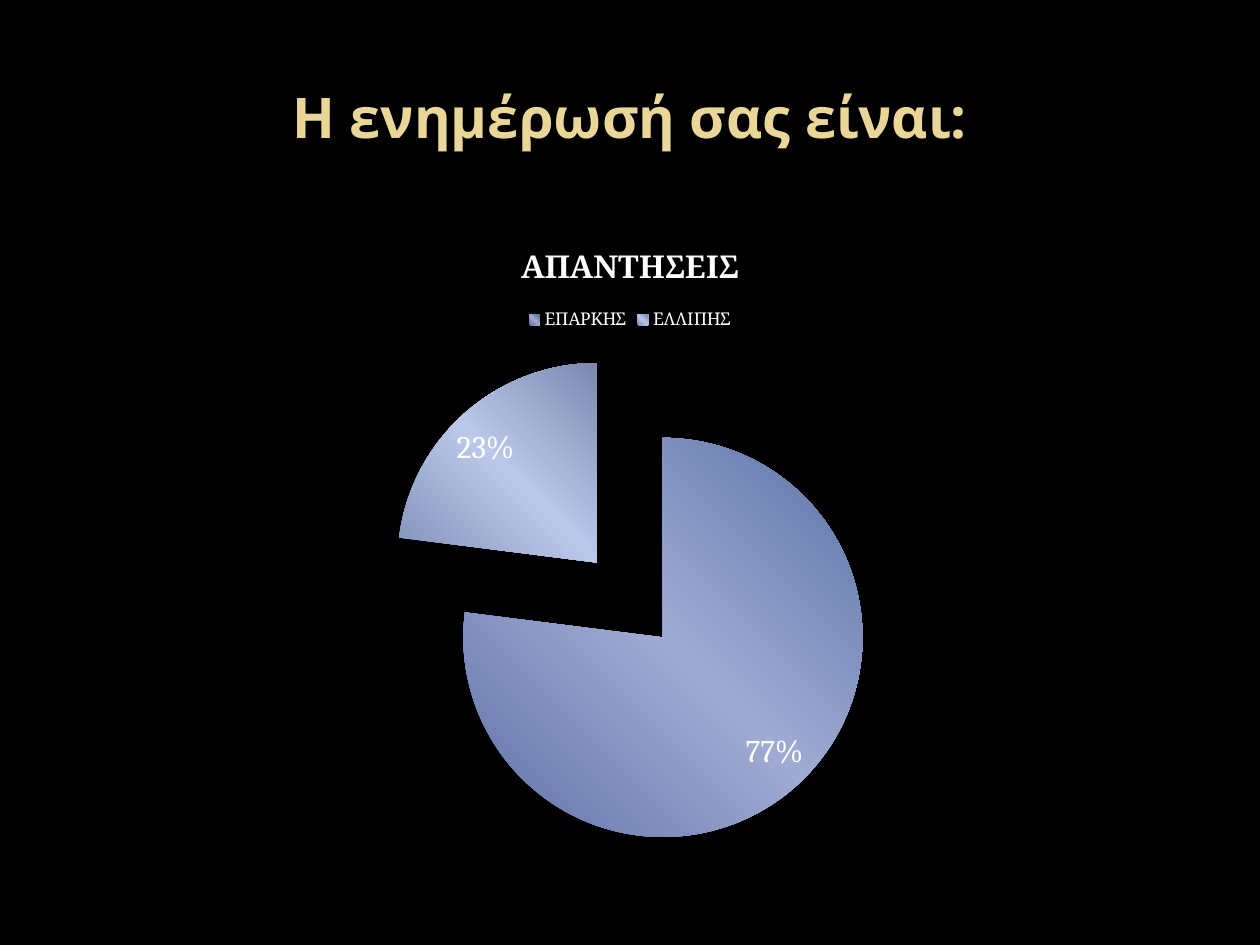
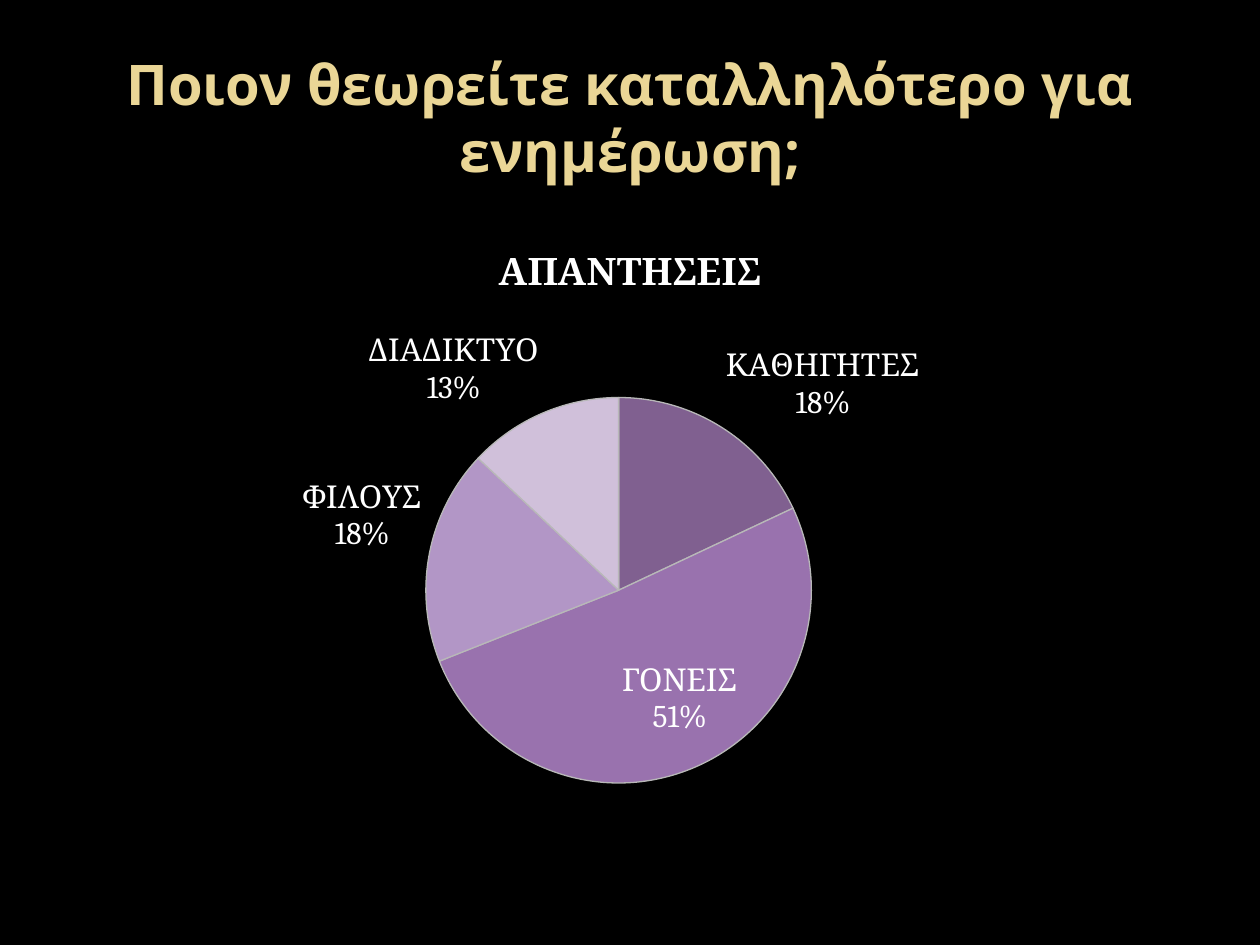
import copy

import pptx
import pptx.chart.data
import pptx.dml.color
import pptx.enum.chart
import pptx.enum.text
import pptx.oxml
import pptx.oxml.ns
import pptx.util
from pptx.util import Inches

COLORS = {"background": "000000", "title": "EAD696", "text": "FFFFFF", "outline": "B8B8B8"}
TITLE_FONT = "Noto Sans"
CHART_FONT = "Cambria"
CHART_TITLE = "ΑΠΑΝΤΗΣΕΙΣ"
LABEL_SIZE = 18

QUESTIONS = [
    {
        "title": "Η ενημέρωσή σας είναι:",
        "answers": [("ΕΠΑΡΚΗΣ", 77), ("ΕΛΛΙΠΗΣ", 23)],
        "fills": [("5F70A5", "A0ABD3", "5B73A6"), ("8090B8", "BCC8EA", "7B89B0")],
        "font_size": 10,
        "chart_title_size": 18,
        "explosion": 25,
        "legend": True,
        "outlined": False,
        "plot": {"x": 0.28, "y": 0.2, "w": 0.44, "h": 0.77},
    },
    {
        "title": "Ποιον θεωρείτε καταλληλότερο για ενημέρωση;",
        "answers": [("ΚΑΘΗΓΗΤΕΣ", 18), ("ΓΟΝΕΙΣ", 51), ("ΦΙΛΟΥΣ", 18), ("ΔΙΑΔΙΚΤΥΟ", 13)],
        "fills": [("806090",), ("9972AE",), ("B296C6",), ("D0C0DA",)],
        "font_size": 18,
        "chart_title_size": 21.6,
        "explosion": 0,
        "legend": False,
        "outlined": True,
        "plot": {"x": 0.32, "y": 0.27, "w": 0.34, "h": 0.6},
    },
]


def rgb(value):
    return pptx.dml.color.RGBColor.from_string(value)


def style_font(font, name, size, color, bold=False):
    font.name = name
    font.size = pptx.util.Pt(size)
    font.bold = bold
    font.color.rgb = rgb(color)


def chart_element(tag, value=None):
    element = pptx.oxml.parse_xml(f"<c:{tag} {pptx.oxml.ns.nsdecls('c')}/>")
    if value is not None:
        element.set("val", str(value))
    return element


def add_title(page, text):
    title = page.shapes.title
    title.left, title.top = Inches(0.5), Inches(0.3)
    title.width, title.height = Inches(9), Inches(1.25)
    title.text_frame.text = text
    title.text_frame.word_wrap = True
    title.text_frame.vertical_anchor = pptx.enum.text.MSO_ANCHOR.MIDDLE
    para = title.text_frame.paragraphs[0]
    para.alignment = pptx.enum.text.PP_ALIGN.CENTER
    style_font(para.font, TITLE_FONT, 32, COLORS["title"], True)


def fill_slice(series, index, shades, outlined):
    look = series.points[index].format
    if len(shades) == 1:
        look.fill.solid()
        look.fill.fore_color.rgb = rgb(shades[0])
    else:
        look.fill.gradient()
        look.fill.gradient_angle = 45
        stop_list = series._element.findall(".//" + pptx.oxml.ns.qn("a:gsLst"))[-1]
        stop_list.append(copy.deepcopy(stop_list[0]))
        for stop, shade, position in zip(look.fill.gradient_stops, shades, (0, 0.5, 1)):
            stop.color.rgb = rgb(shade)
            stop.position = position
    if outlined:
        look.line.color.rgb = rgb(COLORS["outline"])
        look.line.width = pptx.util.Pt(0.75)
    else:
        look.line.fill.background()


def label_slices(series, show_category):
    labels = series.data_labels
    labels.show_percentage = True
    labels.show_value = False
    labels.show_category_name = show_category
    labels.position = pptx.enum.chart.XL_LABEL_POSITION.BEST_FIT
    style_font(labels.font, CHART_FONT, LABEL_SIZE, COLORS["text"])
    if show_category:
        separator = chart_element("separator")
        separator.text = "\n"
        labels._element.find(pptx.oxml.ns.qn("c:showBubbleSize")).addnext(separator)


def place_plot(chart, plot):
    area = chart._chartSpace.chart.plotArea
    for old in area.findall(pptx.oxml.ns.qn("c:layout")):
        area.remove(old)
    layout = chart_element("layout")
    manual = chart_element("manualLayout")
    layout.append(manual)
    manual.append(chart_element("layoutTarget", "inner"))
    for mode in ("xMode", "yMode"):
        manual.append(chart_element(mode, "edge"))
    for side, share in plot.items():
        manual.append(chart_element(side, share))
    area.insert(0, layout)


def add_pie(page, question):
    data = pptx.chart.data.CategoryChartData()
    data.categories = [name for name, _ in question["answers"]]
    data.add_series(CHART_TITLE, [value for _, value in question["answers"]])
    chart = page.shapes.add_chart(
        pptx.enum.chart.XL_CHART_TYPE.PIE,
        Inches(0.5), Inches(1.75), Inches(9), Inches(5.15), data,
    ).chart
    style_font(chart.font, CHART_FONT, question["font_size"], COLORS["text"])

    chart.has_title = True
    chart.chart_title.text_frame.text = CHART_TITLE
    style_font(
        chart.chart_title.text_frame.paragraphs[0].font,
        CHART_FONT, question["chart_title_size"], COLORS["text"], True,
    )
    chart.has_legend = question["legend"]
    if question["legend"]:
        chart.legend.position = pptx.enum.chart.XL_LEGEND_POSITION.TOP
        chart.legend.include_in_layout = False

    chart.plots[0].vary_by_categories = True
    series = chart.plots[0].series[0]
    if question["explosion"]:
        name = series._element.find(pptx.oxml.ns.qn("c:tx"))
        name.addnext(chart_element("explosion", question["explosion"]))
    for index, shades in enumerate(question["fills"]):
        fill_slice(series, index, shades, question["outlined"])
    label_slices(series, not question["legend"])
    place_plot(chart, question["plot"])


def main():
    deck = pptx.Presentation()
    deck.slide_width, deck.slide_height = Inches(10), Inches(7.5)
    backdrop = deck.slide_master.background.fill
    backdrop.solid()
    backdrop.fore_color.rgb = rgb(COLORS["background"])
    for question in QUESTIONS:
        page = deck.slides.add_slide(deck.slide_layouts.get_by_name("Title Only"))
        add_title(page, question["title"])
        add_pie(page, question)
    deck.save("out.pptx")


if __name__ == "__main__":
    main()
